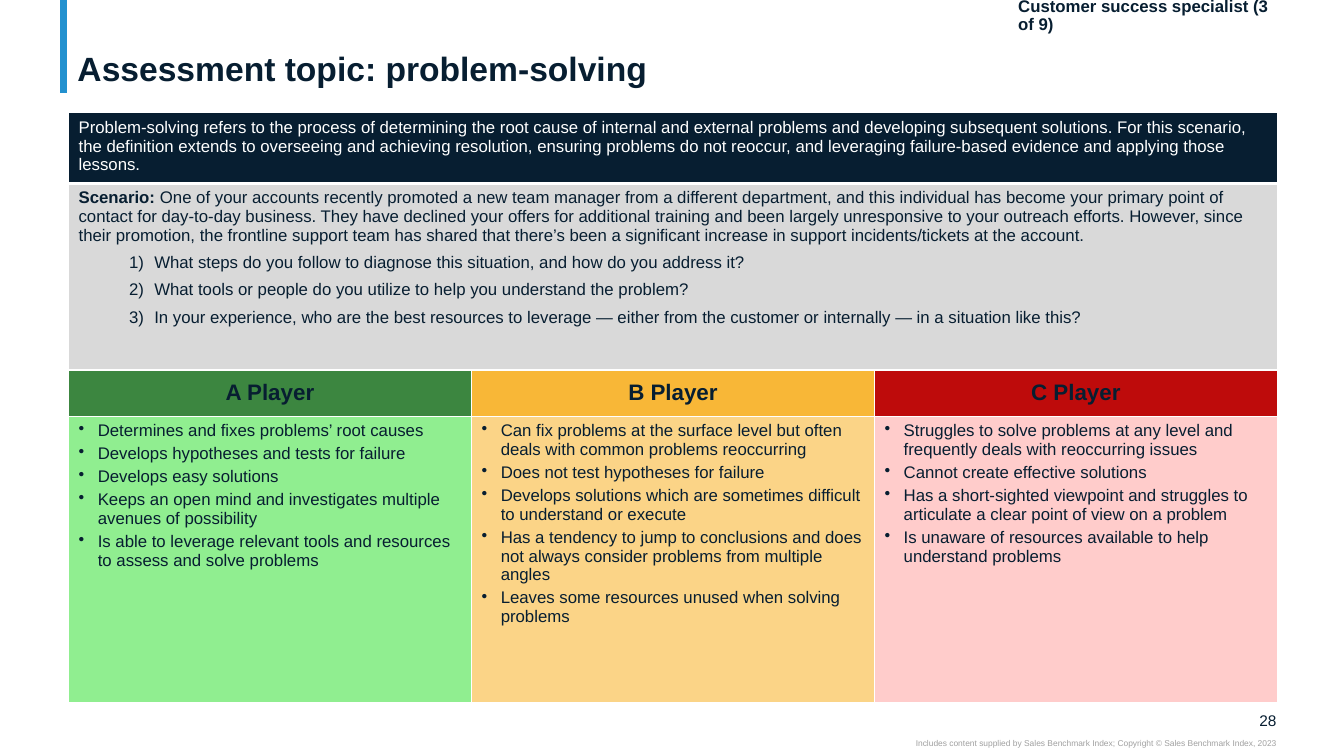
from dataclasses import dataclass

from lxml import etree
from pptx import Presentation
from pptx.dml.color import RGBColor
from pptx.enum.shapes import MSO_CONNECTOR
from pptx.enum.text import MSO_ANCHOR, PP_ALIGN
from pptx.oxml.ns import qn
from pptx.util import Inches, Pt

STRAIGHT = MSO_CONNECTOR.STRAIGHT
TOP, MIDDLE, BOTTOM = MSO_ANCHOR.TOP, MSO_ANCHOR.MIDDLE, MSO_ANCHOR.BOTTOM
LEFT, CENTER, RIGHT = PP_ALIGN.LEFT, PP_ALIGN.CENTER, PP_ALIGN.RIGHT


@dataclass(frozen=True)
class Theme:
    font: str = "Arial"
    navy: str = "071E31"
    white: str = "FFFFFF"
    accent: str = "2391CF"
    panel: str = "D9D9D9"
    muted: str = "A0A0A0"
    title: int = 24
    heading: int = 16
    body: int = 12
    number: int = 11
    footer: int = 6


THEME = Theme()

DEFINITION = (
    "Problem-solving refers to the process of determining the root cause of internal and external "
    "problems and developing subsequent solutions. For this scenario, the definition extends to "
    "overseeing and achieving resolution, ensuring problems do not reoccur, and leveraging "
    "failure-based evidence and applying those lessons."
)
SCENARIO = (
    "One of your accounts recently promoted a new team manager from a different department, and this "
    "individual has become your primary point of contact for day-to-day business. They have declined "
    "your offers for additional training and been largely unresponsive to your outreach efforts. "
    "However, since their promotion, the frontline support team has shared that there’s been a "
    "significant increase in support incidents/tickets at the account."
)
QUESTIONS = [
    "What steps do you follow to diagnose this situation, and how do you address it?",
    "What tools or people do you utilize to help you understand the problem?",
    "In your experience, who are the best resources to leverage — either from the customer or "
    "internally — in a situation like this?",
]
PLAYERS = [
    ("A Player", "3C8640", "90EE90", [
        "Determines and fixes problems’ root causes",
        "Develops hypotheses and tests for failure",
        "Develops easy solutions",
        "Keeps an open mind and investigates multiple avenues of possibility",
        "Is able to leverage relevant tools and resources to assess and solve problems",
    ]),
    ("B Player", "F8B737", "FBD487", [
        "Can fix problems at the surface level but often deals with common problems reoccurring",
        "Does not test hypotheses for failure",
        "Develops solutions which are sometimes difficult to understand or execute",
        "Has a tendency to jump to conclusions and does not always consider problems from "
        "multiple angles",
        "Leaves some resources unused when solving problems",
    ]),
    ("C Player", "BE0B0B", "FFCCCB", [
        "Struggles to solve problems at any level and frequently deals with reoccurring issues",
        "Cannot create effective solutions",
        "Has a short-sighted viewpoint and struggles to articulate a clear point of view on a problem",
        "Is unaware of resources available to help understand problems",
    ]),
]


def add_run(p, text, size=THEME.body, color=THEME.navy, bold=False):
    r = p.add_run()
    r.text = text
    r.font.name = THEME.font
    r.font.size = Pt(size)
    r.font.bold = bold
    r.font.color.rgb = RGBColor.from_string(color)


def add_marker(p, tag, indent, hanging, **attrs):
    pPr = p._p.get_or_add_pPr()
    pPr.set("marL", str(Inches(indent)))
    pPr.set("indent", str(-Inches(hanging)))
    marker = etree.SubElement(pPr, qn(tag))
    for name, value in attrs.items():
        marker.set(name, value)


def add_text(slide, box, text, size, color=THEME.navy, bold=False, align=LEFT,
             anchor=TOP, inset=0.0, spacing=None):
    tf = slide.shapes.add_textbox(*map(Inches, box)).text_frame
    tf.word_wrap = True
    tf.vertical_anchor = anchor
    tf.margin_left = tf.margin_right = Inches(inset)
    tf.margin_top = tf.margin_bottom = 0
    p = tf.paragraphs[0]
    p.alignment = align
    if spacing:
        p.line_spacing = spacing
    add_run(p, text, size, color, bold)


def style_cell(cell, fill, anchor=TOP, top=1, bottom=1):
    cell.vertical_anchor = anchor
    cell.fill.solid()
    cell.fill.fore_color.rgb = RGBColor.from_string(fill)
    tcPr = cell._tc.get_or_add_tcPr()
    for i, (side, width) in enumerate([("L", 1), ("R", 1), ("T", top), ("B", bottom)]):
        ln = etree.Element(qn(f"a:ln{side}"), w=str(Pt(width)))
        solid = etree.SubElement(ln, qn("a:solidFill"))
        etree.SubElement(solid, qn("a:srgbClr"), val=THEME.white)
        tcPr.insert(i, ln)


def add_header(slide, box):
    x, y, w, h = box
    bar = slide.shapes.add_connector(STRAIGHT, Inches(x - 0.04), 0, Inches(x - 0.04), Inches(0.92))
    bar.line.color.rgb = RGBColor.from_string(THEME.accent)
    bar.line.width = Pt(5)
    etree.SubElement(bar._element.spPr, qn("a:effectLst"))
    add_text(slide, box, "Assessment topic: problem-solving", THEME.title, bold=True,
             anchor=BOTTOM, inset=0.1, spacing=0.9)
    add_text(slide, (x + w - 2.66, y, 2.79, 0.3), "Customer success specialist (3 of 9)",
             THEME.body, bold=True, anchor=BOTTOM, inset=0.1, spacing=0.9)


def add_assessment(slide, box):
    table = slide.shapes.add_table(4, len(PLAYERS), *map(Inches, box)).table
    for row, height in zip(table.rows, (0.56, 1.85, 0.46, 2.84)):
        row.height = Inches(height)
    for col in range(len(PLAYERS)):
        style_cell(table.cell(0, col), THEME.navy, bottom=3)
        style_cell(table.cell(1, col), THEME.panel, top=3)
    for row in (0, 1):
        table.cell(row, 0).merge(table.cell(row, len(PLAYERS) - 1))

    p = table.cell(0, 0).text_frame.paragraphs[0]
    p.space_after = Pt(6)
    add_run(p, DEFINITION, color=THEME.white)

    tf = table.cell(1, 0).text_frame
    p = tf.paragraphs[0]
    p.space_after = Pt(6)
    add_run(p, "Scenario: ", bold=True)
    add_run(p, SCENARIO)
    for question in QUESTIONS:
        p = tf.add_paragraph()
        p.level = 1
        p.space_after = Pt(6)
        add_marker(p, "a:buAutoNum", 0.75, 0.25, type="arabicParenR")
        add_run(p, question)

    for col, (name, dark, light, traits) in enumerate(PLAYERS):
        heading, body = table.cell(2, col), table.cell(3, col)
        style_cell(heading, dark, MIDDLE)
        style_cell(body, light)
        p = heading.text_frame.paragraphs[0]
        p.alignment = CENTER
        add_run(p, name, THEME.heading, bold=True)
        tf = body.text_frame
        for i, trait in enumerate(traits):
            p = tf.add_paragraph() if i else tf.paragraphs[0]
            if i:
                p.space_before = Pt(3)
            add_marker(p, "a:buChar", 0.19, 0.19, char="•")
            add_run(p, trait)


def add_footer(slide, box):
    x, y, w, h = box
    add_text(slide, (x + w - 0.33, y, 0.33, 0.19), "28", THEME.number, align=RIGHT, anchor=MIDDLE)
    add_text(slide, (x, y + h - 0.1, w, 0.1),
             "Includes content supplied by Sales Benchmark Index; Copyright © Sales Benchmark Index, 2023",
             THEME.footer, THEME.muted, align=RIGHT)


def main():
    prs = Presentation()
    prs.slide_width, prs.slide_height = Inches(13.33), Inches(7.5)
    slide = prs.slides.add_slide(prs.slide_layouts[6])
    add_header(slide, (0.67, 0.04, 11.99, 0.84))
    add_assessment(slide, (0.68, 1.12, 11.99, 5.71))
    add_footer(slide, (7.5, 7.05, 5.16, 0.37))
    prs.save("out.pptx")


if __name__ == "__main__":
    main()
